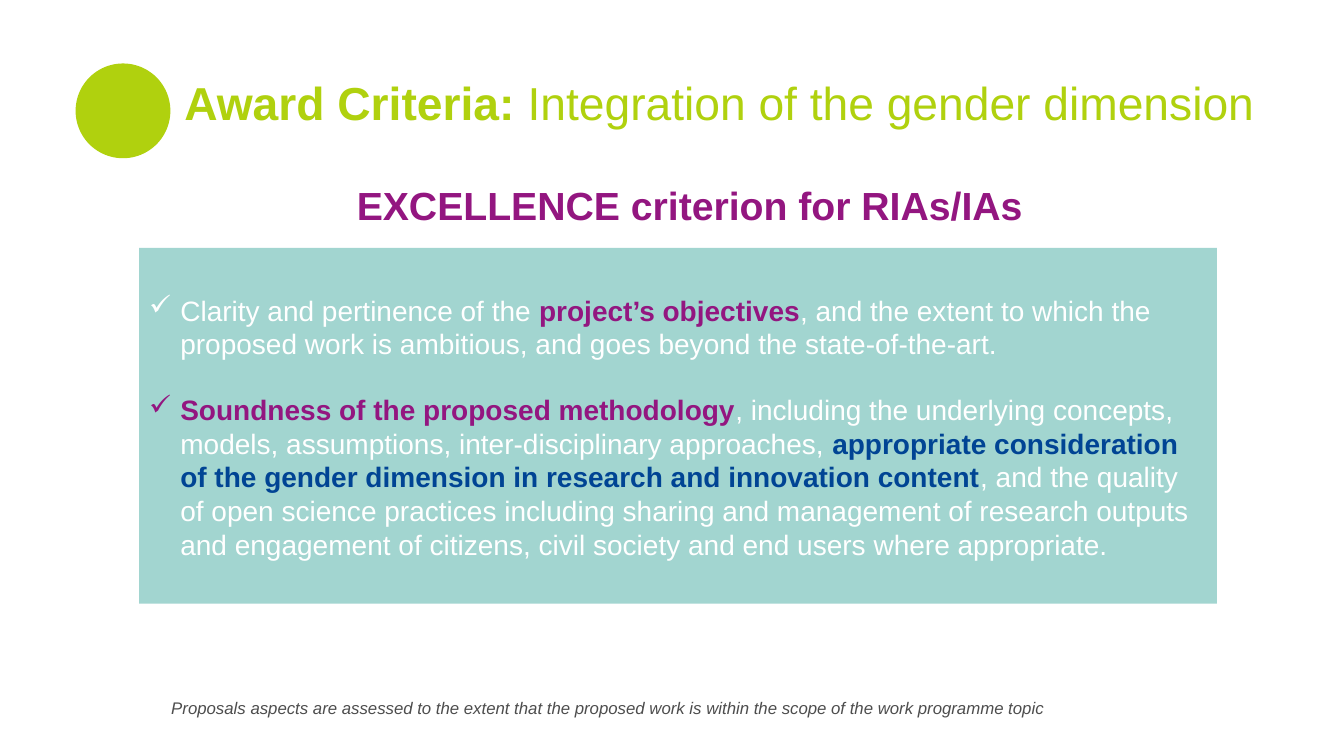
from lxml import etree
from pptx import Presentation
from pptx.dml.color import RGBColor
from pptx.enum import shapes, text
from pptx.oxml.ns import qn
from pptx.util import Inches, Pt

LIME = RGBColor(0xB0, 0xD1, 0x0E)
TEAL = RGBColor(0xA2, 0xD5, 0xD0)
PURPLE = RGBColor(0x93, 0x16, 0x80)
BLUE = RGBColor(0x00, 0x44, 0x94)
GREY = RGBColor(0x4D, 0x4D, 0x4D)
WHITE = RGBColor(0xFF, 0xFF, 0xFF)

deck = Presentation()
deck.slide_width, deck.slide_height = Inches(13.33), Inches(7.5)
slide = deck.slides.add_slide(deck.slide_layouts[6])


def add_runs(paragraph, runs, size, italic=False):
    """Each run is (wording, colour, bold)."""
    for wording, colour, bold in runs:
        run = paragraph.add_run()
        run.text = wording
        run.font.color.rgb = colour
        formats = {"name": "Arial", "size": Pt(size), "bold": bold, "italic": italic}
        for key, value in formats.items():
            setattr(run.font, key, value)


def add_line(left, top, width, height, runs, size, italic=False, wrap=True):
    frame = slide.shapes.add_textbox(
        Inches(left), Inches(top), Inches(width), Inches(height)).text_frame
    frame.word_wrap = wrap
    add_runs(frame.paragraphs[0], runs, size, italic)
    return frame


# Title
title = add_line(1.73, 0.67, 10.97, 0.62, [
    ("Award Criteria: ", LIME, True),
    ("Integration of the gender dimension", LIME, False)], 33)
title.vertical_anchor = text.MSO_ANCHOR.BOTTOM
title.margin_bottom = 0
title.paragraphs[0].line_spacing = 0.9

# Round marker and criteria panel
marker = slide.shapes.add_shape(
    shapes.MSO_SHAPE.OVAL, Inches(0.75), Inches(0.63), Inches(0.94), Inches(0.94))
panel = slide.shapes.add_shape(
    shapes.MSO_SHAPE.RECTANGLE, Inches(1.38), Inches(2.46), Inches(10.69), Inches(3.53))
for part, colour in ((marker, LIME), (panel, TEAL)):
    part.shadow.inherit = False
    part.fill.solid()
    part.fill.fore_color.rgb = colour
    part.line.fill.background()

# Ticked criteria
criteria = [
    [("Clarity and pertinence of the ", WHITE, False),
     ("project’s objectives", PURPLE, True),
     (", and the extent to which the proposed work is ambitious, and goes beyond "
      "the state-of-the-art.", WHITE, False)],
    [("Soundness of the proposed methodology", PURPLE, True),
     (", including the underlying concepts, models, assumptions, inter-disciplinary "
      "approaches, ", WHITE, False),
     ("appropriate consideration of the gender dimension in research and innovation "
      "content", BLUE, True),
     (", and the quality of open science practices including sharing and management "
      "of research outputs and engagement of citizens, civil society and end users "
      "where appropriate.", WHITE, False)],
]
body = panel.text_frame
body.word_wrap = True
body.vertical_anchor = text.MSO_ANCHOR.TOP
body.margin_top = Inches(0.45)
for number, runs in enumerate(criteria):
    criterion = body.add_paragraph() if number else body.paragraphs[0]
    criterion.alignment = text.PP_ALIGN.LEFT
    if number:
        criterion.space_before = Pt(23)
    properties = criterion._p.get_or_add_pPr()
    properties.set("marL", str(Inches(0.31)))
    properties.set("indent", str(-Inches(0.31)))
    etree.SubElement(properties, qn("a:buChar")).set("char", "✓")
    add_runs(criterion, runs, 20)

# Footnote and criterion heading
add_line(1.6, 6.87, 8.91, 0.3, [
    ("Proposals aspects are assessed to the extent that the proposed work is within "
     "the scope of the work programme topic", GREY, False)], 12, italic=True)
add_line(3.44, 1.75, 6.88, 0.57,
         [("EXCELLENCE criterion for RIAs/IAs", PURPLE, True)], 28, wrap=False)

deck.save("out.pptx")
